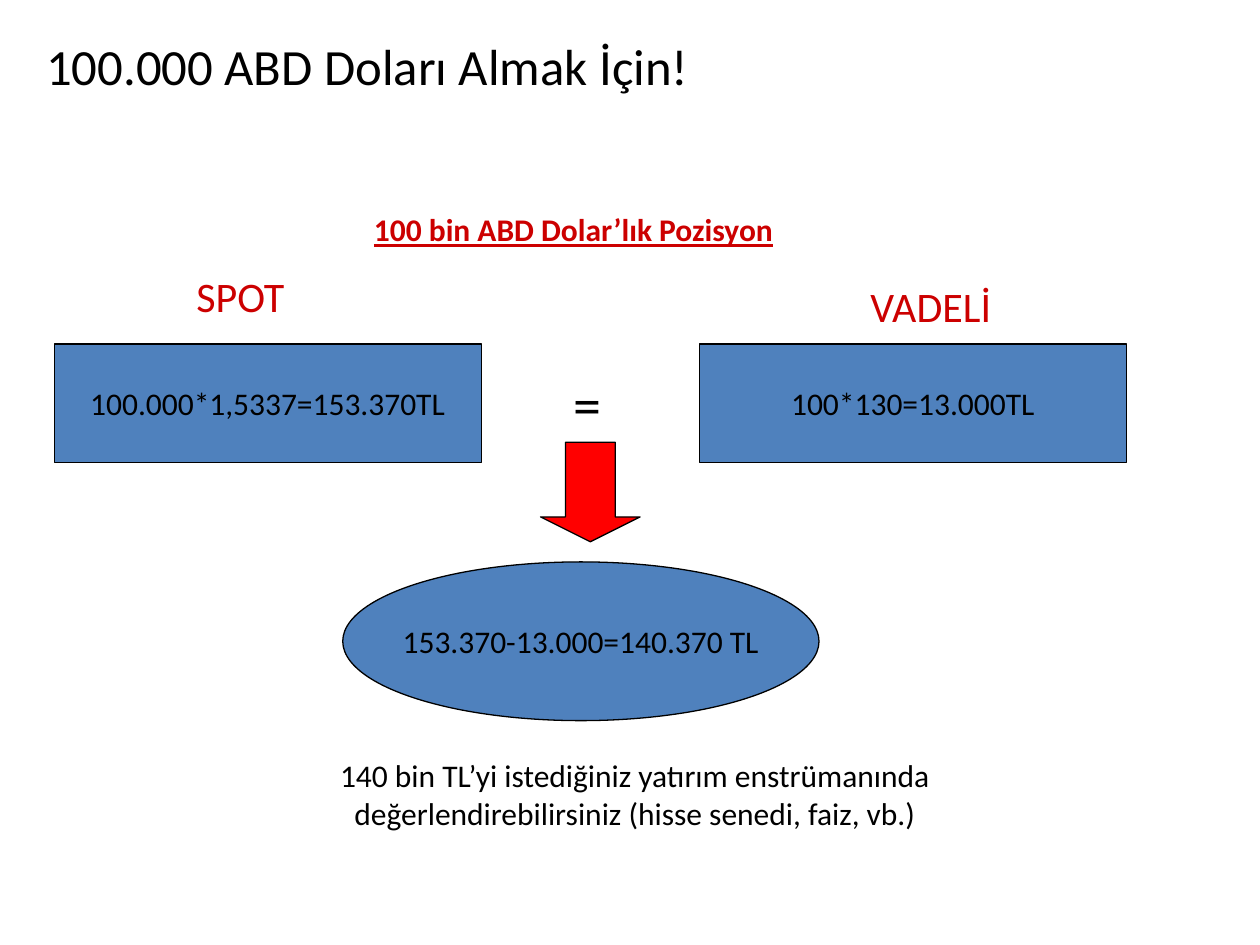
from dataclasses import dataclass

from pptx import Presentation
from pptx.dml import color
from pptx.enum import shapes, text
from pptx.util import Inches, Pt


@dataclass(frozen=True)
class Theme:
    """Colours, type sizes and the grid cell of the slide."""
    font: str = "Calibri"
    ink: str = "000000"
    accent: str = "CC0000"
    panel: str = "4F81BD"
    arrow: str = "FF0000"
    title: int = 29
    symbol: int = 32
    heading: int = 24
    body: int = 18
    outline: float = 0.75
    cell: float = 0.1


THEME = Theme()
COLUMNS, ROWS = 100, 75


@dataclass(frozen=True)
class Box:
    """A region measured in columns and rows."""
    left: float
    top: float
    width: float
    height: float

    def inner(self, column, row, width, height):
        """Return a box offset from this one's corner."""
        return Box(self.left + column, self.top + row, width, height)

    def lengths(self):
        """Return left, top, width and height as slide lengths."""
        cells = (self.left, self.top, self.width, self.height)
        return [Inches(round(cell * THEME.cell, 2)) for cell in cells]


def write(shape, wording, size, ink=THEME.ink, centred=False, frame=None, **font):
    """Put one formatted paragraph into a shape."""
    text_frame = shape.text_frame
    for name, value in ({"word_wrap": True} | (frame or {})).items():
        setattr(text_frame, name, value)
    paragraph = text_frame.paragraphs[0]
    paragraph.alignment = text.PP_ALIGN.CENTER if centred else text.PP_ALIGN.LEFT
    run = paragraph.add_run()
    run.text = wording
    for name, value in {"name": THEME.font, "size": Pt(size), **font}.items():
        setattr(run.font, name, value)
    run.font.color.rgb = color.RGBColor.from_string(ink)


def add_label(slide, box, wording, size, **style):
    """Add a text box that grows with its wording."""
    style.setdefault("frame", {"auto_size": text.MSO_AUTO_SIZE.SHAPE_TO_FIT_TEXT})
    write(slide.shapes.add_textbox(*box.lengths()), wording, size, **style)


def add_outlined(slide, kind, box, fill):
    """Add a filled preset shape with a thin dark outline."""
    shape = slide.shapes.add_shape(kind, *box.lengths())
    shape.shadow.inherit = False
    shape.fill.solid()
    shape.fill.fore_color.rgb = color.RGBColor.from_string(fill)
    shape.line.color.rgb = color.RGBColor.from_string(THEME.ink)
    shape.line.width = Pt(THEME.outline)
    return shape


def add_panel(slide, kind, box, calculation):
    """Add a shape with a calculation in its middle."""
    frame = {"word_wrap": False, "vertical_anchor": text.MSO_ANCHOR.MIDDLE}
    panel = add_outlined(slide, kind, box, THEME.panel)
    write(panel, calculation, THEME.body, centred=True, frame=frame)


def add_title(slide, box):
    """Place the slide title and the heading of the comparison."""
    add_label(slide, box, "100.000 ABD Doları Almak İçin!", THEME.title,
              centred=True, frame={})
    add_label(slide, box.inner(35.7, 13.9, 39.4, 4),
              "100 bin ABD Dolar’lık Pozisyon", THEME.body,
              ink=THEME.accent, bold=True, underline=True)


def add_market(slide, box, name, name_offset, calculation):
    """Place a market's name above its calculation."""
    add_label(slide, box.inner(*name_offset, 12.6, 5), name, THEME.heading,
              ink=THEME.accent)
    add_panel(slide, shapes.MSO_SHAPE.RECTANGLE, box, calculation)


def add_link(slide, box):
    """Place the equals sign over the arrow to the result."""
    add_label(slide, box.inner(1.6, 0, 4.9, 6.3), "=", THEME.symbol)
    arrow_box = box.inner(0, box.height - box.width, box.width, box.width)
    arrow = add_outlined(slide, shapes.MSO_SHAPE.DOWN_ARROW, arrow_box, THEME.arrow)
    arrow.adjustments[0], arrow.adjustments[1] = 0.5, 0.25


def add_result(slide, box):
    """Place the difference and the advice below it."""
    add_panel(slide, shapes.MSO_SHAPE.OVAL, box, "153.370-13.000=140.370 TL")
    add_label(slide, box.inner(-8.7, 14.9, 63.8, 7),
              "140 bin TL’yi istediğiniz yatırım enstrümanında "
              "değerlendirebilirsiniz (hisse senedi, faiz, vb.)",
              THEME.body, centred=True)


def main():
    """Build and save the slide."""
    presentation = Presentation()
    presentation.slide_width = Inches(COLUMNS * THEME.cell)
    presentation.slide_height = Inches(ROWS * THEME.cell)
    slide = presentation.slides.add_slide(presentation.slide_layouts[6])
    add_title(slide, Box(-7, 2.3, 72.4, 8.6))
    markets = [
        (4.3, "SPOT", (10.3, -6.3), "100.000*1,5337=153.370TL"),
        (55.5, "VADELİ", (12.6, -5.5), "100*130=13.000TL"),
    ]
    for left, *content in markets:
        add_market(slide, Box(left, 27.3, 33.9, 9.4), *content)
    add_link(slide, Box(42.9, 28.8, 7.9, 14.2))
    add_result(slide, Box(27.2, 44.6, 37.8, 12.6))
    presentation.save("out.pptx")


if __name__ == "__main__":
    main()
